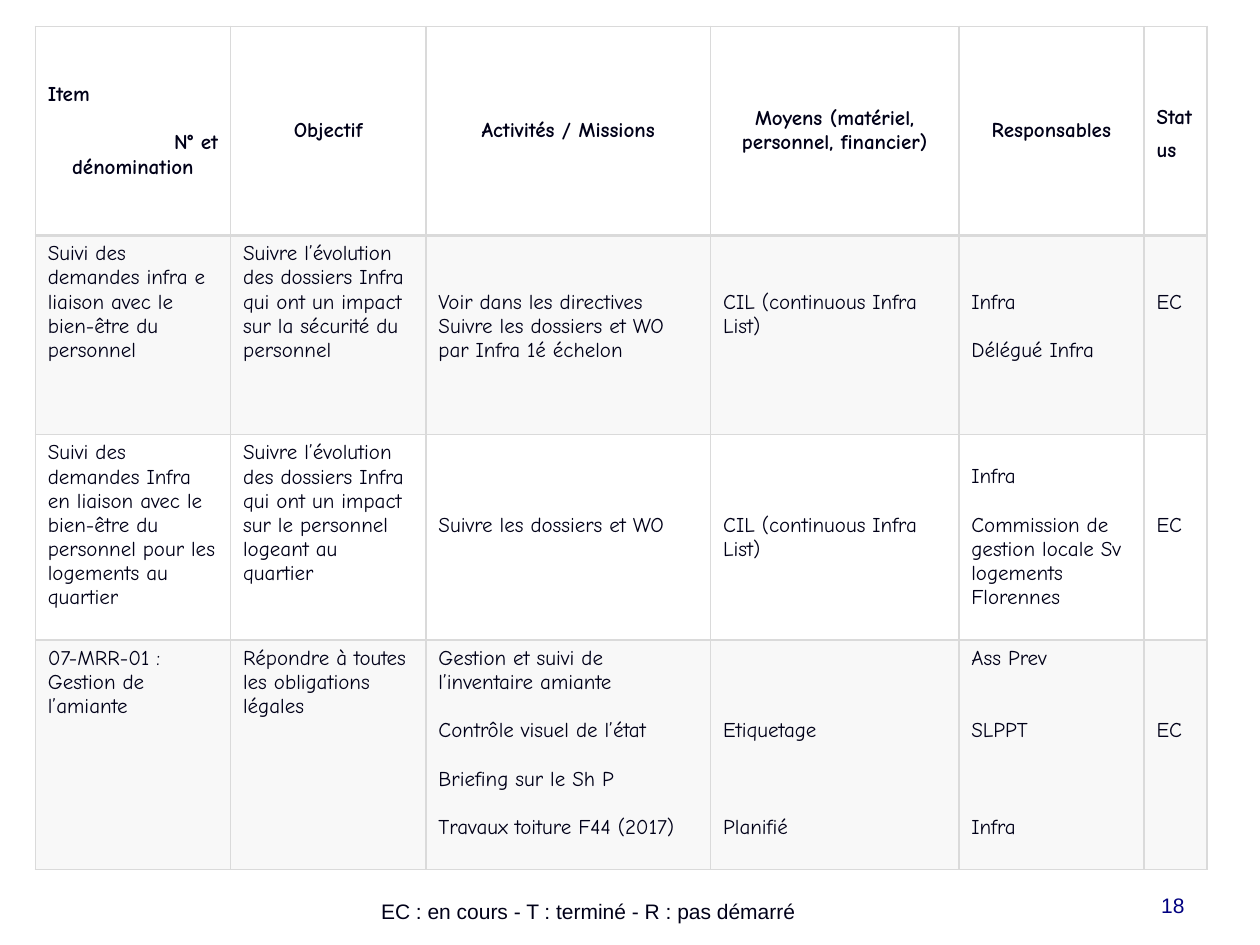
from dataclasses import dataclass

from lxml import etree
from pptx import Presentation
from pptx.dml.color import RGBColor
from pptx.enum import text
from pptx.oxml.ns import qn
from pptx.util import Inches, Pt

LEFT, CENTER, RIGHT = text.PP_ALIGN.LEFT, text.PP_ALIGN.CENTER, text.PP_ALIGN.RIGHT
TOP, MIDDLE, BOTTOM = text.MSO_ANCHOR.TOP, text.MSO_ANCHOR.MIDDLE, text.MSO_ANCHOR.BOTTOM


@dataclass(frozen=True)
class Theme:
    table_font: str = "Comic Neue"
    footer_font: str = "Arial"
    size: int = 12
    line_height: float = 13.8  # points, one line of table text
    ink: str = "000018"
    number: str = "000080"
    border: str = "DADADA"
    band: str = "F8F8F8"


THEME = Theme()

COLUMN_WIDTHS = [1.55, 1.55, 2.26, 1.97, 1.47, 0.5]
ROW_HEIGHTS = [1.66, 1.58, 1.63, 1.82]

# Each paragraph: (lines of space above, text, alignment)
HEADER = [
    [(0, "Item", LEFT), (1, "N° et", RIGHT), (0, "dénomination", CENTER)],
    [(0, "Objectif", CENTER)],
    [(0, "Activités / Missions", CENTER)],
    [(0, "Moyens (matériel, personnel, financier)", CENTER)],
    [(0, "Responsables", CENTER)],
    [(2.6, "Status", LEFT)],
]

# Each paragraph: (lines of space above, text)
ACTIONS = [
    [
        [(0, "Suivi des demandes infra e liaison avec le bien-être du personnel")],
        [(0, "Suivre l’évolution des dossiers Infra qui ont un impact sur la "
             "sécurité du personnel")],
        [(2, "Voir dans les directives"),
         (0, "Suivre les dossiers et WO par Infra 1é échelon")],
        [(2, "CIL (continuous Infra List)")],
        [(2, "Infra"), (1, "Délégué Infra")],
        [(2, "EC")],
    ],
    [
        [(0, "Suivi des demandes Infra en liaison avec le bien-être du "
             "personnel pour les logements au quartier")],
        [(0, "Suivre l’évolution des dossiers Infra qui ont un impact sur le "
             "personnel logeant au quartier")],
        [(3, "Suivre les dossiers et WO")],
        [(3, "CIL (continuous Infra List)")],
        [(1, "Infra"), (1, "Commission de gestion locale Sv logements Florennes")],
        [(3, "EC")],
    ],
    [
        [(0, "07-MRR-01 :"), (0, "Gestion de l’amiante")],
        [(0, "Répondre à toutes les obligations légales")],
        [(0, "Gestion et suivi de l’inventaire amiante"),
         (1, "Contrôle visuel de l’état"), (1, "Briefing sur le Sh P"),
         (1, "Travaux toiture F44 (2017)")],
        [(3, "Etiquetage"), (3, "Planifié")],
        [(0, "Ass Prev"), (2, "SLPPT"), (3, "Infra")],
        [(3, "EC")],
    ],
]

# text, (left, top, width, height), alignment, anchor, colour
FOOTERS = [
    ("18", (7.17, 6.83, 2.33, 0.5), RIGHT, BOTTOM, THEME.number),
    ("EC : en cours - T : terminé - R : pas démarré", (2.17, 7.08, 5, 0.3),
     CENTER, TOP, THEME.ink),
]


def add_run(paragraph, words, font_name, colour, bold=False):
    run = paragraph.add_run()
    run.text = words
    run.font.name = font_name
    run.font.size = Pt(THEME.size)
    run.font.bold = bold
    run.font.color.rgb = RGBColor.from_string(colour)


def set_borders(cell, widths):
    """Draw the cell edges; widths maps L, R, T and B to points."""
    properties = cell._tc.get_or_add_tcPr()
    for side, width in widths.items():
        line = etree.SubElement(properties, qn(f"a:ln{side}"), w=str(Pt(width)))
        fill = etree.SubElement(line, qn("a:solidFill"))
        etree.SubElement(fill, qn("a:srgbClr"), val=THEME.border)


def fill_cell(cell, paragraphs, bold):
    """Write the paragraphs; space above the first one goes into the margin."""
    frame = cell.text_frame
    frame.word_wrap = True
    for index, (gap, words, *alignment) in enumerate(paragraphs):
        space = Pt(gap * THEME.line_height)
        if index == 0:
            paragraph = frame.paragraphs[0]
            cell.margin_top = Inches(0.05) + space
        else:
            paragraph = frame.add_paragraph()
            paragraph.space_before = space
        paragraph.alignment = alignment[0] if alignment else LEFT
        add_run(paragraph, words, THEME.table_font, THEME.ink, bold)


def add_action_table(slide):
    rows = [HEADER] + ACTIONS
    table = slide.shapes.add_table(
        len(rows), len(COLUMN_WIDTHS), Inches(0.28), Inches(0.21),
        Inches(sum(COLUMN_WIDTHS)), Inches(sum(ROW_HEIGHTS))).table
    table.first_row = table.horz_banding = False
    for column, width in zip(table.columns, COLUMN_WIDTHS):
        column.width = Inches(width)
    for row_index, (cells, height) in enumerate(zip(rows, ROW_HEIGHTS)):
        table.rows[row_index].height = Inches(height)
        is_header = row_index == 0
        borders = {"L": 1, "R": 1, "T": 2 if row_index == 1 else 1,
                   "B": 2 if is_header else 1}
        for column_index, paragraphs in enumerate(cells):
            cell = table.cell(row_index, column_index)
            set_borders(cell, borders)
            if row_index % 2:
                cell.fill.solid()
                cell.fill.fore_color.rgb = RGBColor.from_string(THEME.band)
            else:
                cell.fill.background()
            is_status = column_index == len(cells) - 1
            cell.vertical_anchor = MIDDLE if is_header and not is_status else TOP
            fill_cell(cell, paragraphs, is_header)
    table.cell(0, len(HEADER) - 1).text_frame.paragraphs[0].line_spacing = 1.4


def add_footer(slide, words, box, alignment, anchor, colour):
    frame = slide.shapes.add_textbox(*map(Inches, box)).text_frame
    frame.word_wrap = True
    frame.vertical_anchor = anchor
    paragraph = frame.paragraphs[0]
    paragraph.alignment = alignment
    add_run(paragraph, words, THEME.footer_font, colour)


def main():
    presentation = Presentation()
    presentation.slide_width, presentation.slide_height = Inches(10), Inches(7.5)
    slide = presentation.slides.add_slide(presentation.slide_layouts[6])
    add_action_table(slide)
    for footer in FOOTERS:
        add_footer(slide, *footer)
    presentation.save("out.pptx")


if __name__ == "__main__":
    main()
